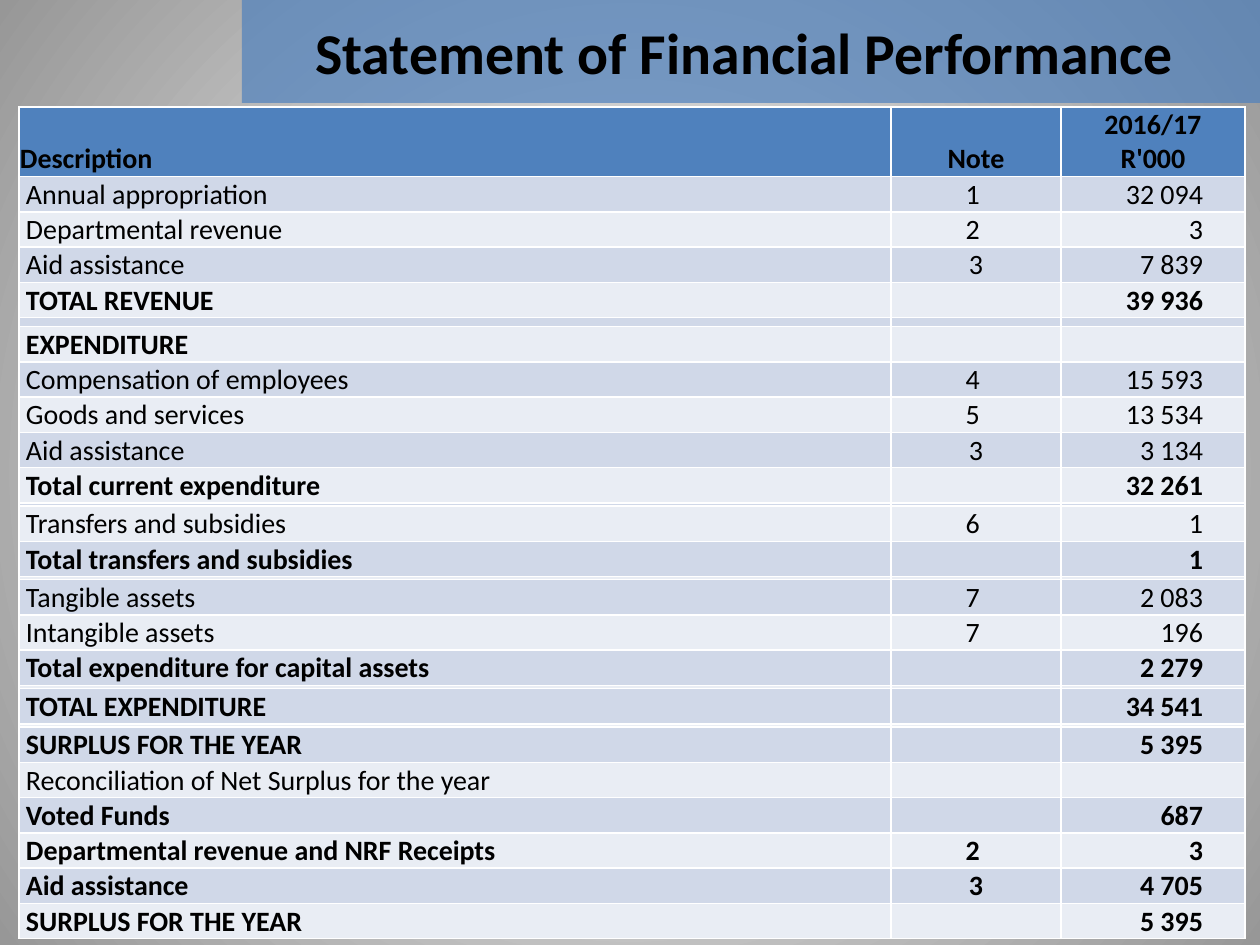
from typing import Any, NamedTuple

from lxml import etree
from pptx import Presentation, util as u
from pptx.dml.color import RGBColor
from pptx.enum import text as t
from pptx.oxml import parse_xml
from pptx.oxml.ns import nsdecls, qn

EMU_PER_PX = 914400 / 126
COLOURS = {
    "ink": "000000",
    "accent": "4F81BD",
    "odd": "D0D8E8",
    "even": "E9EDF4",
    "centre": "FFFFFF",
    "edge": "979797",
}
FONT = "Calibri"
ROW_HEIGHT = 34
COLUMN_WIDTHS = (872, 170, 184)
ALIGNMENTS = (t.PP_ALIGN.LEFT, t.PP_ALIGN.CENTER, t.PP_ALIGN.RIGHT)


class Line(NamedTuple):
    description: str = ""
    note: str = ""
    amount: str = ""
    bold: bool = False
    height: int = ROW_HEIGHT


GAP = Line(height=1)
HEADINGS = Line("Description", "Note", "2016/17\nR'000", True, 66)
STATEMENT = (
    Line("Annual appropriation", "1 ", "32 094"),
    Line("Departmental revenue", "2 ", "3"),
    Line("Aid assistance", "3", "7 839"),
    Line("TOTAL REVENUE", "", "39 936", True),
    Line(height=9),
    Line("EXPENDITURE", bold=True),
    Line("Compensation of employees", "4 ", "15 593"),
    Line("Goods and services", "5 ", "13 534"),
    Line("Aid assistance", "3", "3 134"),
    Line("Total current expenditure", "", "32 261", True),
    GAP,
    Line("Transfers and subsidies", "6 ", "1"),
    Line("Total transfers and subsidies", "", "1", True),
    GAP,
    Line("Tangible assets", "7 ", "2 083"),
    Line("Intangible assets", "7 ", "196"),
    Line("Total expenditure for capital assets", "", "2 279", True),
    GAP,
    Line("TOTAL EXPENDITURE", "", "34 541", True),
    GAP,
    Line("SURPLUS FOR THE YEAR", "", "5 395", True),
    Line("Reconciliation of Net Surplus for the year"),
    Line("Voted Funds", "", "687", True),
    Line("Departmental revenue and NRF Receipts", "2 ", "3", True),
    Line("Aid assistance", "3", "4 705", True),
    Line("SURPLUS FOR THE YEAR", "", "5 395", True),
)


def px(length: int) -> u.Emu:
    return u.Emu(round(length * EMU_PER_PX))


def apply(target: Any, values: dict[str, Any]) -> None:
    for name, value in values.items():
        setattr(target, name, value)


def paint(fill: Any, colour: str) -> None:
    fill.solid()
    fill.fore_color.rgb = RGBColor.from_string(COLOURS[colour])


def format_text(frame: Any, size: int, bold: bool, alignment: t.PP_ALIGN) -> None:
    for paragraph in frame.paragraphs:
        paragraph.alignment = alignment
        for run in paragraph.runs:
            apply(run.font, {"name": FONT, "size": u.Pt(size), "bold": bold})
            run.font.color.rgb = RGBColor.from_string(COLOURS["ink"])


def draw_background(slide: Any) -> None:
    stops = "".join(
        f'<a:gs pos="{position}"><a:srgbClr val="{COLOURS[name]}"/></a:gs>'
        for position, name in ((0, "centre"), (100000, "edge"))
    )
    background = parse_xml(
        f'<p:bg {nsdecls("p", "a")}><p:bgPr><a:gradFill rotWithShape="1">'
        f'<a:gsLst>{stops}</a:gsLst><a:path path="circle">'
        '<a:fillToRect l="50000" t="50000" r="50000" b="50000"/></a:path>'
        "</a:gradFill><a:effectLst/></p:bgPr></p:bg>"
    )
    slide.shapes._spTree.addprevious(background)


def draw_title(slide: Any, wording: str) -> None:
    title = slide.shapes.title
    apply(title, {"left": px(242), "top": px(0), "width": px(1018), "height": px(103)})
    paint(title.fill, "accent")
    colour = title.fill._xPr.find(f".//{qn('a:srgbClr')}")
    etree.SubElement(colour, qn("a:alpha"), val="70000")
    title.text_frame.text = wording
    apply(title.text_frame, {
        "word_wrap": True,
        "auto_size": t.MSO_AUTO_SIZE.NONE,
        "vertical_anchor": t.MSO_ANCHOR.MIDDLE,
    })
    format_text(title.text_frame, 33, True, t.PP_ALIGN.CENTER)


def draw_cell(cell: Any, wording: str, bold: bool, header: bool,
              colour: str, column: int) -> None:
    paint(cell.fill, colour)
    apply(cell, {
        "margin_left": px(7 if column == 0 and not header else 1),
        "margin_right": px(42 if column == 2 and not header else 1),
        "margin_top": px(1),
        "margin_bottom": px(0),
        "vertical_anchor": t.MSO_ANCHOR.BOTTOM if header else t.MSO_ANCHOR.MIDDLE,
    })
    if not wording:
        paragraph = cell.text_frame.paragraphs[0]
        etree.SubElement(paragraph._p, qn("a:endParaRPr"), sz="100")
        return
    cell.text_frame.text = wording
    alignment = t.PP_ALIGN.CENTER if header and column else ALIGNMENTS[column]
    format_text(cell.text_frame, 16, bold, alignment)


def draw_statement(slide: Any, lines: tuple[Line, ...]) -> None:
    height = sum(line.height for line in lines)
    table = slide.shapes.add_table(
        len(lines), len(COLUMN_WIDTHS), px(19), px(107),
        px(sum(COLUMN_WIDTHS)), px(height),
    ).table
    for column, width in zip(table.columns, COLUMN_WIDTHS):
        column.width = px(width)
    for index, line in enumerate(lines):
        table.rows[index].height = px(line.height)
        header = index == 0
        colour = "accent" if header else ("even", "odd")[index % 2]
        for column, wording in enumerate(line[:3]):
            draw_cell(table.cell(index, column), wording, line.bold,
                      header, colour, column)


def main() -> None:
    deck = Presentation()
    apply(deck, {"slide_width": px(1260), "slide_height": px(945)})
    slide = deck.slides.add_slide(deck.slide_layouts[5])
    draw_background(slide)
    draw_title(slide, "Statement of Financial Performance ")
    draw_statement(slide, (HEADINGS, *STATEMENT))
    deck.save("out.pptx")


if __name__ == "__main__":
    main()
